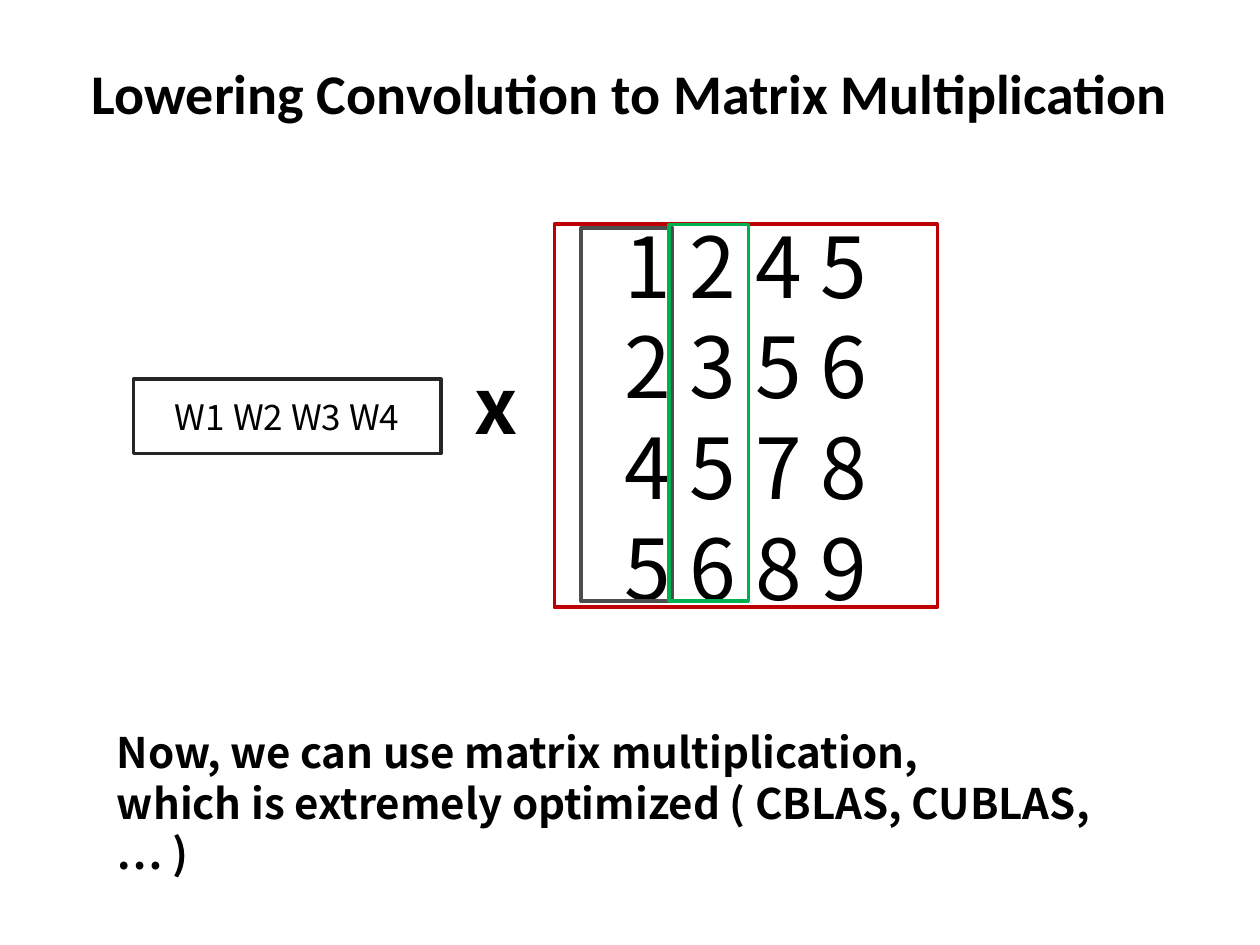
from dataclasses import dataclass

from pptx import Presentation
from pptx import util as u
from pptx.dml.color import RGBColor
from pptx.enum import shapes, text

SANS = "Noto Sans CJK KR"
LINE_HEIGHT = 1.2  # line pitch in ems
CENTER, LEFT = text.PP_ALIGN.CENTER, text.PP_ALIGN.LEFT
MIDDLE, TOP = text.MSO_ANCHOR.MIDDLE, text.MSO_ANCHOR.TOP


@dataclass
class Box:
    left: float
    top: float
    width: float
    height: float
    lines: tuple[str, ...] = ()
    size: int = 20
    line_color: str = ""
    font: str = SANS
    bold: bool = False
    align: text.PP_ALIGN = CENTER
    anchor: text.MSO_ANCHOR = MIDDLE


def color(value: str) -> RGBColor:
    return RGBColor.from_string(value)


def write_lines(shape, box: Box) -> None:
    frame = shape.text_frame
    frame.word_wrap = True
    frame.vertical_anchor = box.anchor
    font_format = {"name": box.font, "size": u.Pt(box.size), "bold": box.bold}
    for index, line in enumerate(box.lines):
        paragraph = frame.paragraphs[0] if index == 0 else frame.add_paragraph()
        paragraph.alignment = box.align
        if box.font == SANS:
            paragraph.line_spacing = u.Pt(box.size * LINE_HEIGHT)
        run = paragraph.add_run()
        run.text = line
        for name, value in font_format.items():
            setattr(run.font, name, value)
        run.font.color.rgb = color("000000")


def draw_box(slide, box: Box) -> None:
    place = [u.Inches(v) for v in (box.left, box.top, box.width, box.height)]
    if box.line_color:
        shape = slide.shapes.add_shape(shapes.MSO_SHAPE.RECTANGLE, *place)
        shape.shadow.inherit = False
        shape.fill.background()
        shape.line.color.rgb = color(box.line_color)
        shape.line.width = u.Pt(2)
    else:
        shape = slide.shapes.add_textbox(*place)
    if box.lines:
        write_lines(shape, box)


BOXES = (
    # Title
    Box(0.5, 0.3, 9, 0.87, ("Lowering Convolution to Matrix Multiplication",),
        32, font="Calibri", bold=True),
    # Lowered input matrix with its first two columns outlined
    Box(4.4, 1.78, 3.04, 3.04, ("1 2 4 5", "2 3 5 6", "4 5 7 8", "5 6 8 9"),
        48, "C00000"),
    Box(4.61, 1.81, 0.73, 2.96, line_color="4D4D4D"),
    Box(5.31, 1.78, 0.63, 2.99, line_color="00B050"),
    # Weight row and multiplication sign
    Box(1.06, 3.01, 2.44, 0.59, ("W1 W2 W3 W4",), 20, "262626"),
    Box(3.62, 2.79, 0.63, 0.84, ("x",), 44, bold=True, anchor=TOP),
    # Conclusion
    Box(0.83, 5.72, 8.5, 0.91,
        ("Now, we can use matrix multiplication,",
         "which is extremely optimized ( CBLAS, CUBLAS, … )"),
        24, bold=True, align=LEFT, anchor=TOP),
)


def main() -> None:
    presentation = Presentation()
    presentation.slide_width = u.Inches(10)
    presentation.slide_height = u.Inches(7.5)
    slide = presentation.slides.add_slide(presentation.slide_layouts[6])
    for box in BOXES:
        draw_box(slide, box)
    presentation.save("out.pptx")


if __name__ == "__main__":
    main()
